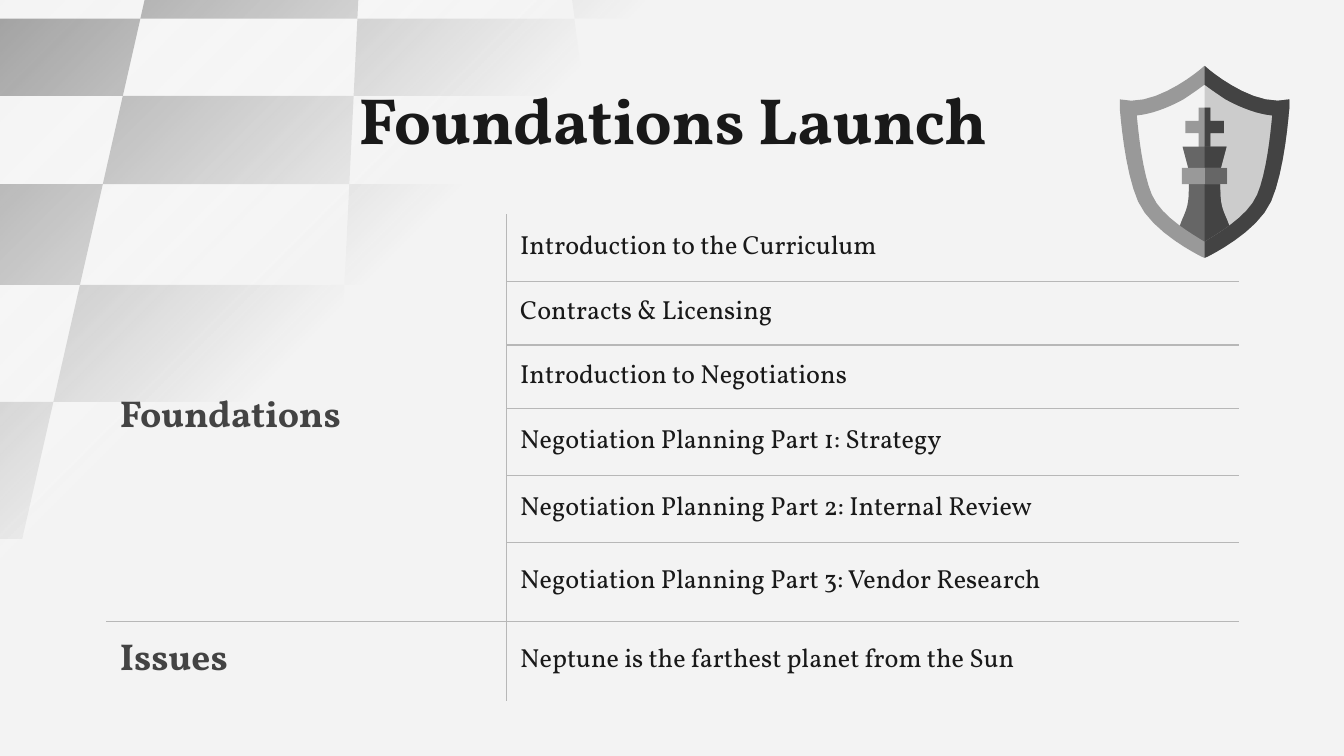
import dataclasses

import pptx
import pptx.dml.color
import pptx.enum.shapes
import pptx.enum.text
import pptx.oxml
import pptx.oxml.ns
import pptx.util

Pt = pptx.util.Pt


@dataclasses.dataclass(frozen=True)
class Theme:
    font: str = "Vollkorn"
    paper: str = "F3F3F3"
    glow: str = "FFFFFF"
    ink: str = "191919"
    dark: str = "434343"
    middle: str = "666666"
    soft: str = "999999"
    pale: str = "CCCCCC"
    rule: str = "B7B7B7"
    title_size: float = 35
    heading_size: float = 20
    body_size: float = 14
    rule_width: float = 0.75


ROW_EDGES = [-26.6, 10, 51.3, 98.6, 152.6, 215.3, 288.7]
FADE_REACH = 346  # left + top beyond which the fade hides a square
SHIELD_AXIS = 645.3

# Right halves as (distance from axis, y); six numbers make a Bézier curve.
FIELD = [(0, 40.3), (0, 40.3, 21.5, 58.3, 39.5, 58.3), (41, 58.3),
         (41, 58.3, 39, 90.7, 32, 106.6), (25, 121.7, 0, 133.9, 0, 133.9)]
CROSS = [(0, 57.6), (3.2, 57.6), (3.2, 64.8), (10.3, 64.8),
         (10.3, 71.3), (3.2, 71.3), (3.2, 80.6), (0, 80.6)]
BODY = [(0, 92.9), (8.4, 92.9), (8.4, 101.5), (8.4, 111.6, 10.6, 113.8, 12.7, 119.5),
        (14.4, 123.8, 15, 128.2, 15, 129.6), (0, 129.6)]
COLLAR = [(0, 78.5), (11.8, 78.5), (7.8, 93.6), (0, 93.6)]
BAND = [(0, 90), (12.1, 90), (12.1, 98.6), (0, 98.6)]
RIM = [(0, 35.3), (2.5, 37.4), (2.5, 37.4, 22, 54, 39.2, 54), (45.4, 53.3), (45.4, 58.3),
       (45.2, 59.8, 43, 91.4, 35.6, 108), (28.2, 124.6, 2.5, 137, 1.7, 137.5), (0, 138.2),
       (0, 129.6), (5.5, 126, 23, 116.6, 28.2, 104.4), (33.2, 92.9, 35.4, 71.3, 36.3, 61.9),
       (29, 61.2, 20.5, 58.3, 11.3, 53.3), (7, 50.4, 2.8, 47.5, 0, 45.4)]

SECTIONS = [
    ("Foundations", ["Introduction to the Curriculum", "Contracts & Licensing",
                     "Introduction to Negotiations", "Negotiation Planning Part 1: Strategy",
                     "Negotiation Planning Part 2: Internal Review",
                     "Negotiation Planning Part 3: Vendor Research"]),
    ("Issues", ["Neptune is the farthest planet from the Sun"]),
]
COLUMN_WIDTHS = [214.5, 392.5]
ROW_HEIGHTS = [36, 34, 34, 36, 36, 42, 43]


def rgb(value):
    return pptx.dml.color.RGBColor.from_string(value)


def flatten(outline, steps=8):
    """Turn lines and Bézier curves into a plain list of points."""
    points = []
    for segment in outline:
        if len(segment) == 2:
            points.append(segment)
            continue
        start = points[-1]
        controls = [start, segment[0:2], segment[2:4], segment[4:6]]
        for step in range(1, steps + 1):
            t = step / steps
            weights = [(1 - t) ** 3, 3 * t * (1 - t) ** 2, 3 * t * t * (1 - t), t ** 3]
            points.append(tuple(sum(w * c[axis] for w, c in zip(weights, controls))
                                for axis in (0, 1)))
    return points


def board_x(line, y):
    """x of a board line; the lines spread apart further down."""
    depth = y - ROW_EDGES[1]
    return 191.5 - 0.049 * depth + line * (116.3 + 0.178 * depth)


class Painter:
    def __init__(self, page, theme):
        self.page = page
        self.theme = theme
        page.background.fill.solid()
        page.background.fill.fore_color.rgb = rgb(theme.paper)

    def polygon(self, group, points, color):
        corners = [(Pt(x), Pt(y)) for x, y in points]
        builder = group.shapes.build_freeform(*corners[0])
        builder.add_line_segments(corners[1:], close=True)
        shape = builder.convert_to_shape()
        shape.shadow.inherit = False
        shape.fill.solid()
        shape.fill.fore_color.rgb = rgb(color)
        shape.line.fill.background()

    def chessboard(self):
        group = self.page.shapes.add_group_shape()
        for row, (top, bottom) in enumerate(zip(ROW_EDGES, ROW_EDGES[1:])):
            for line in range(-2, 2):
                left, right = board_x(line, top), board_x(line + 1, top)
                visible = right > 0 and left + max(top, 0) < FADE_REACH
                if (row + line) % 2 and visible:
                    self.polygon(group, [(left, top), (board_x(line, bottom), bottom),
                                         (board_x(line + 1, bottom), bottom), (right, top)],
                                 self.theme.soft)

    def fade(self):
        """Cover the board with a diagonal veil, clear at the top left."""
        veil = self.page.shapes.add_shape(pptx.enum.shapes.MSO_SHAPE.RECTANGLE,
                                          Pt(-18.5), Pt(-7.5), Pt(743), Pt(423.5))
        veil.shadow.inherit = False
        veil.line.fill.background()
        stops = [(0, self.theme.glow, 0), (32, self.theme.paper, 100),
                 (100, self.theme.paper, 100)]
        stop_xml = "".join(
            f'<a:gs pos="{place * 1000}"><a:srgbClr val="{color}">'
            f'<a:alpha val="{opacity * 1000}"/></a:srgbClr></a:gs>'
            for place, color, opacity in stops)
        gradient = pptx.oxml.parse_xml(
            f'<a:gradFill {pptx.oxml.ns.nsdecls("a")} rotWithShape="1"><a:gsLst>{stop_xml}'
            '</a:gsLst><a:lin ang="2700000" scaled="0"/></a:gradFill>')
        veil._element.spPr.find(pptx.oxml.ns.qn("a:prstGeom")).addnext(gradient)

    def set_text(self, frame, text, size, color, bold):
        frame.word_wrap = True
        frame.margin_left = frame.margin_right = Pt(7.2)
        frame.margin_top = frame.margin_bottom = Pt(7.2)
        para = frame.paragraphs[0]
        para.text = text
        para.font.name = self.theme.font
        para.font.size = Pt(size)
        para.font.bold = bold
        para.font.color.rgb = rgb(color)
        return para

    def title(self, text):
        box = self.page.shapes.add_textbox(Pt(57), Pt(35.3), Pt(607), Pt(45.4))
        para = self.set_text(box.text_frame, text, self.theme.title_size, self.theme.ink, True)
        para.alignment = pptx.enum.text.PP_ALIGN.CENTER

    def borders(self, cell, sides):
        properties = cell._tc.get_or_add_tcPr()
        for side in sides:
            properties.append(pptx.oxml.parse_xml(
                f'<a:ln{side} {pptx.oxml.ns.nsdecls("a")} w="{Pt(self.theme.rule_width)}">'
                f'<a:solidFill><a:srgbClr val="{self.theme.rule}"/></a:solidFill></a:ln{side}>'))

    def cell_text(self, cell, text, size, color, bold):
        self.set_text(cell.text_frame, text, size, color, bold)
        cell.vertical_anchor = pptx.enum.text.MSO_ANCHOR.MIDDLE

    def agenda(self, sections):
        theme = self.theme
        count = len(ROW_HEIGHTS)
        table = self.page.shapes.add_table(count, 2, Pt(57), Pt(114.8), Pt(sum(COLUMN_WIDTHS)),
                                           Pt(sum(ROW_HEIGHTS))).table
        table.first_row = table.horz_banding = False
        for column, width in zip(table.columns, COLUMN_WIDTHS):
            column.width = Pt(width)
        for row, height in zip(table.rows, ROW_HEIGHTS):
            row.height = Pt(height)
        # The plain style without grid lines
        style = table._tbl.tblPr.find(pptx.oxml.ns.qn("a:tableStyleId"))
        style.text = "{2D5ABB26-0587-4C30-8999-92F81FD0307C}"

        first = 0
        for heading, topics in sections:
            last = first + len(topics) - 1
            for index, topic in enumerate(topics, first):
                top = ["T"] if index else []
                bottom = ["B"] if index < count - 1 else []
                self.borders(table.cell(index, 0), ["R"] + (top if index == first else [])
                             + (bottom if index in (first, last) else []))
                self.borders(table.cell(index, 1), ["L"] + top + bottom)
                self.cell_text(table.cell(index, 1), topic, theme.body_size, theme.ink, False)
            if last > first:
                table.cell(first, 0).merge(table.cell(last, 0))
            self.cell_text(table.cell(first, 0), heading, theme.heading_size, theme.dark, True)
            first = last + 1
        for cell in table.iter_cells():
            cell.fill.background()

    def shield(self):
        theme = self.theme
        group = self.page.shapes.add_group_shape()
        for outline, base, shade in [
            (FIELD, theme.paper, theme.pale), (CROSS, theme.soft, theme.dark),
            (BODY, theme.middle, theme.dark), (COLLAR, theme.middle, theme.dark),
            (BAND, theme.soft, theme.middle), (RIM, theme.soft, theme.dark),
        ]:
            points = flatten(outline)
            right = [(SHIELD_AXIS + x, y) for x, y in points]
            left = [(SHIELD_AXIS - x, y) for x, y in reversed(points)]
            self.polygon(group, right + left, base)
            self.polygon(group, right, shade)


def main():
    deck = pptx.Presentation()
    deck.slide_width, deck.slide_height = Pt(720), Pt(405)
    painter = Painter(deck.slides.add_slide(deck.slide_layouts[6]), Theme())
    painter.chessboard()
    painter.fade()
    painter.title("Foundations Launch")
    painter.agenda(SECTIONS)
    painter.shield()
    deck.save("out.pptx")


if __name__ == "__main__":
    main()
